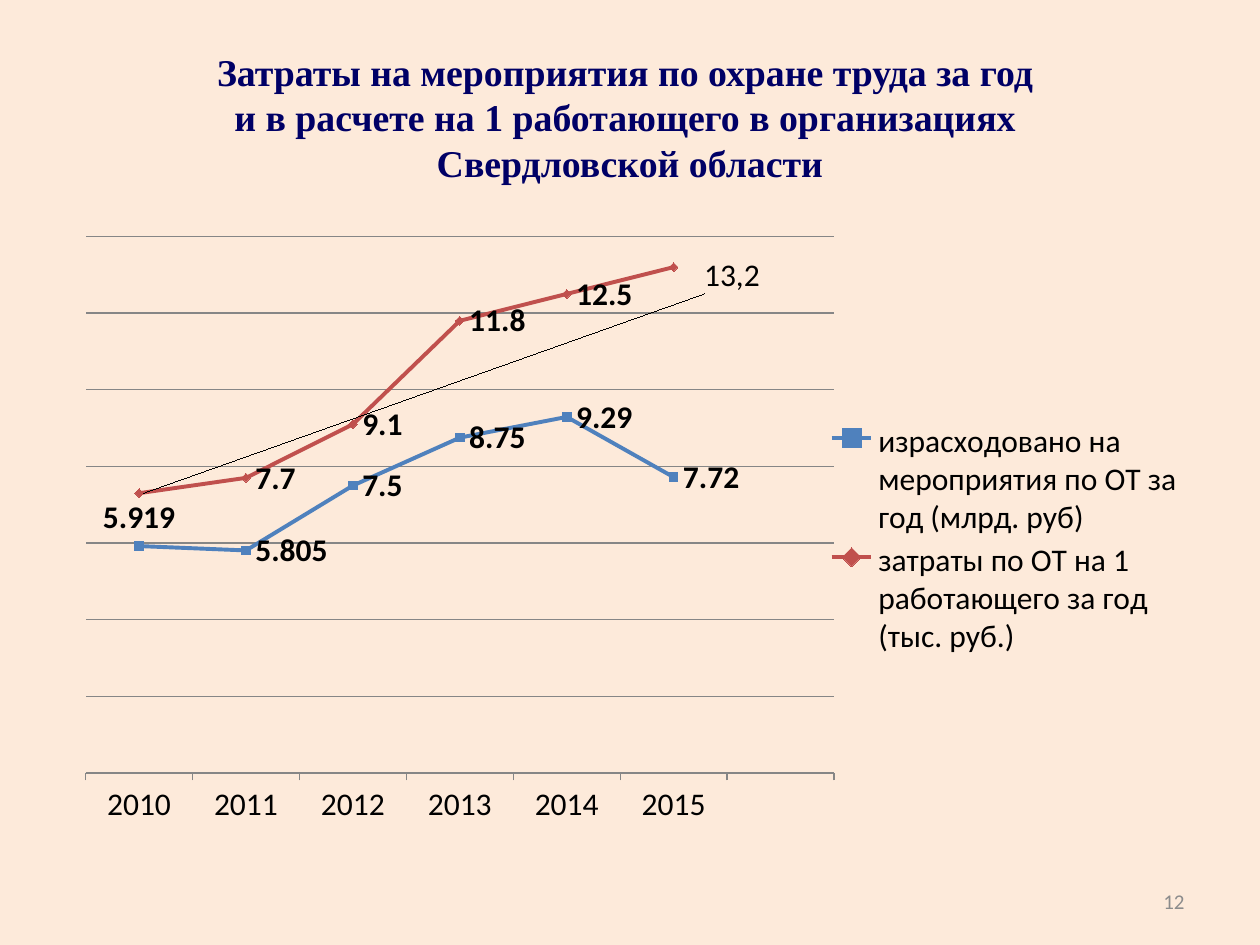
import pptx
import pptx.util
import pptx.oxml
import pptx.chart.data
import pptx.dml.color
import pptx.enum.chart
import pptx.enum.text

Pt = pptx.util.Pt
Align = pptx.enum.text.PP_ALIGN
Place = pptx.enum.chart.XL_LABEL_POSITION
Marker = pptx.enum.chart.XL_MARKER_STYLE

TITLE = (
    "Затраты на мероприятия по охране труда за год \v"
    "и в расчете на 1 работающего в организациях \v"
    "Свердловской области"
)
PAGE_NUMBER = "12"
YEARS = ["2010", "2011", "2012", "2013", "2014", "2015", ""]
SERIES = [
    {
        "name": "израсходовано на мероприятия по ОТ за год (млрд. руб)",
        "values": [5.919, 5.805, 7.5, 8.75, 9.29, 7.72, None],
        "color": "4F81BD",
        "marker": Marker.SQUARE,
        "labels": {0: Place.ABOVE, **dict.fromkeys(range(1, 6), Place.RIGHT)},
    },
    {
        "name": "затраты по ОТ на 1 работающего за год (тыс. руб.)",
        "values": [7.3, 7.7, 9.1, 11.8, 12.5, 13.2, None],
        "color": "C0504D",
        "marker": Marker.DIAMOND,
        "labels": dict.fromkeys(range(1, 5), Place.RIGHT),
    },
]
MOVED_LABEL = "13,2"
MOVED_OFFSET = {"x": 0.49, "y": -0.35}
PLOT_AREA = {"x": 0.02, "y": 0.02, "w": 0.66, "h": 0.86}
LEGEND_AREA = {"x": 0.67, "y": 0.31, "w": 0.32, "h": 0.39}


def rgb(code):
    return pptx.dml.color.RGBColor.from_string(code)


def style(font, name, size, color, bold=False):
    font.name = name
    font.size = Pt(size)
    font.color.rgb = rgb(color)
    font.bold = bold


def add_text(page, area, text, align, *look):
    box = page.shapes.add_textbox(*map(Pt, area))
    frame = box.text_frame
    frame.word_wrap = True
    frame.vertical_anchor = pptx.enum.text.MSO_ANCHOR.MIDDLE
    para = frame.paragraphs[0]
    para.text = text
    para.alignment = align
    for span in para.runs:
        style(span.font, *look)


def layout(area, inner=False, edge=True):
    parts = ['<c:layoutTarget val="inner"/>'] if inner else []
    if edge:
        parts += ['<c:xMode val="edge"/>', '<c:yMode val="edge"/>']
    parts += [f'<c:{key} val="{value}"/>' for key, value in area.items()]
    return pptx.oxml.parse_xml(
        '<c:layout xmlns:c="http://schemas.openxmlformats.org/drawingml/2006/chart">'
        f'<c:manualLayout>{"".join(parts)}</c:manualLayout></c:layout>'
    )


def replace_layout(parent, position, element):
    for old in parent.findall(element.tag):
        parent.remove(old)
    parent.insert(position, element)


def style_series(series, item):
    series.smooth = False
    series.format.line.color.rgb = rgb(item["color"])
    series.format.line.width = Pt(2.25)
    series.marker.style = item["marker"]
    series.marker.size = 5
    series.marker.format.fill.solid()
    series.marker.format.fill.fore_color.rgb = rgb(item["color"])
    series.marker.format.line.color.rgb = rgb(item["color"])
    series.data_labels.show_value = False
    for index, place in item["labels"].items():
        label = series.points[index].data_label
        style(label.font, "Calibri", 18, "000000", True)
        label.position = place


def add_cost_chart(page):
    data = pptx.chart.data.CategoryChartData()
    data.categories = YEARS
    for item in SERIES:
        data.add_series(item["name"], item["values"])
    kind = pptx.enum.chart.XL_CHART_TYPE.LINE_MARKERS
    chart = page.shapes.add_chart(kind, Pt(36), Pt(128), Pt(648), Pt(356.5), data).chart
    chart.has_title = False
    style(chart.font, "Calibri", 18, "000000")
    plot = chart.plots[0]
    plot.vary_by_categories = False

    values = chart.value_axis
    values.visible = False
    values.minimum_scale, values.maximum_scale, values.major_unit = 0, 14, 2
    values.has_major_gridlines = True
    years = chart.category_axis
    years.major_tick_mark = pptx.enum.chart.XL_TICK_MARK.OUTSIDE
    for rule in (values.major_gridlines, years):
        rule.format.line.color.rgb = rgb("868686")
        rule.format.line.width = Pt(0.75)

    chart.has_legend = True
    legend = chart.legend
    legend.position = pptx.enum.chart.XL_LEGEND_POSITION.RIGHT
    legend.include_in_layout = False
    style(legend.font, "Calibri", 18, "000000")

    for series, item in zip(plot.series, SERIES):
        style_series(series, item)

    moved = plot.series[1].points[0].data_label
    moved.text_frame.text = MOVED_LABEL
    style(moved.text_frame.paragraphs[0].runs[0].font, "Calibri", 18, "000000")
    moved.position = Place.RIGHT
    label = plot.series[1].data_labels._element.dLbl_lst[0]
    replace_layout(label, 1, layout(MOVED_OFFSET, edge=False))
    replace_layout(chart._chartSpace.chart.plotArea, 0, layout(PLOT_AREA, inner=True))
    replace_layout(legend._element, 1, layout(LEGEND_AREA))


def main():
    deck = pptx.Presentation()
    deck.slide_width, deck.slide_height = Pt(720), Pt(540)
    page = deck.slides.add_slide(deck.slide_layouts[6])
    page.background.fill.solid()
    page.background.fill.fore_color.rgb = rgb("FDEADA")
    add_text(page, (36, 21.6, 648, 90), TITLE, Align.CENTER,
             "Times New Roman", 21.6, "000066", True)
    add_cost_chart(page)
    add_text(page, (516, 500.5, 168, 28.8), PAGE_NUMBER, Align.RIGHT,
             "Calibri", 12, "8C8C8C")
    deck.save("out.pptx")


if __name__ == "__main__":
    main()
